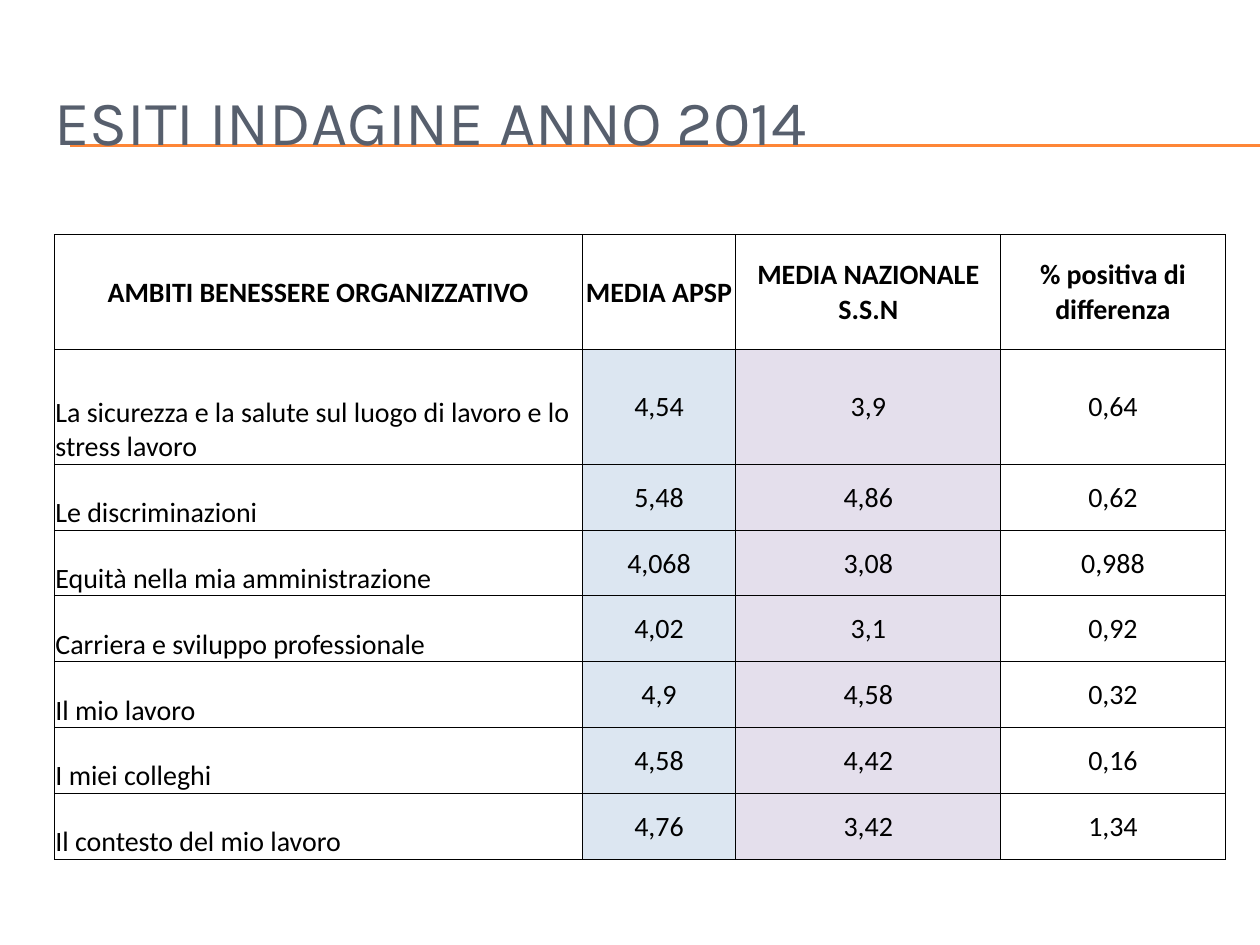
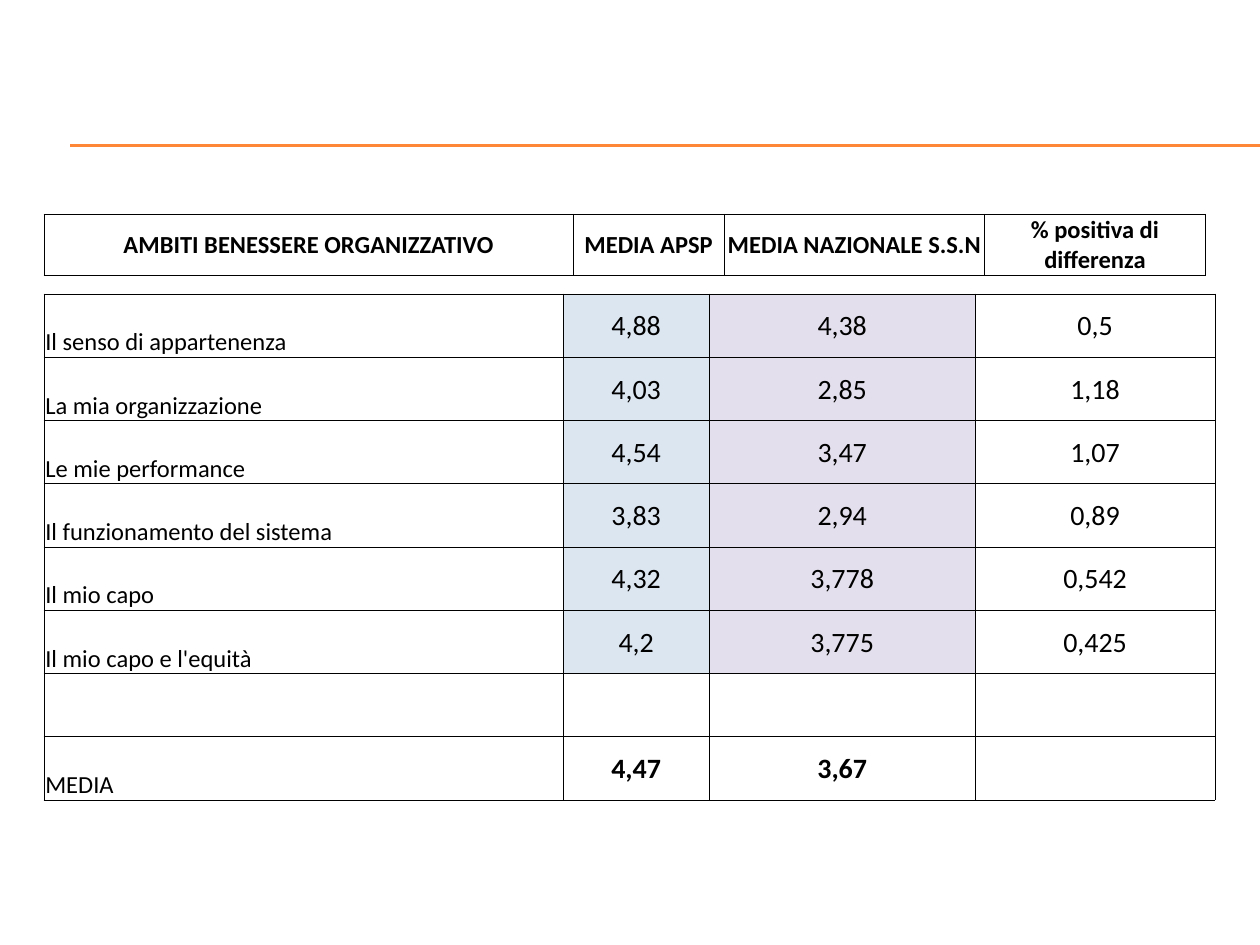
from lxml.etree import SubElement
from pptx import Presentation
from pptx.dml.color import RGBColor
from pptx.enum.shapes import MSO_CONNECTOR
from pptx.enum.text import MSO_ANCHOR, PP_ALIGN
from pptx.oxml.ns import qn
from pptx.util import Pt

COLORS = {
    "rule": "FE8637",
    "title": "575F6D",
    "text": "000000",
    "apsp": "DCE6F1",
    "national": "E4DFEC",
}
HEADERS = ("AMBITI BENESSERE ORGANIZZATIVO", "MEDIA APSP",
           "MEDIA NAZIONALE S.S.N", "% positiva di differenza")
FIRST_AREAS = [
    ("La sicurezza e la salute sul luogo di lavoro e lo stress lavoro",
     "4,54", "3,9", "0,64"),
    ("Le discriminazioni", "5,48", "4,86", "0,62"),
    ("Equità nella mia amministrazione", "4,068", "3,08", "0,988"),
    ("Carriera e sviluppo professionale", "4,02", "3,1", "0,92"),
    ("Il mio lavoro", "4,9", "4,58", "0,32"),
    ("I miei colleghi", "4,58", "4,42", "0,16"),
    ("Il contesto del mio lavoro", "4,76", "3,42", "1,34"),
]
SECOND_AREAS = [
    ("Il senso di appartenenza", "4,88", "4,38", "0,5"),
    ("La mia organizzazione", "4,03", "2,85", "1,18"),
    ("Le mie performance", "4,54", "3,47", "1,07"),
    ("Il funzionamento del sistema", "3,83", "2,94", "0,89"),
    ("Il mio capo", "4,32", "3,778", "0,542"),
    ("Il mio capo e l'equità", "4,2", "3,775", "0,425"),
    ("", "", "", ""),
    ("MEDIA", "4,47", "3,67", ""),
]


class SurveyDeck:
    title_font = "Karla"
    table_font = "Calibri"
    column_fills = (None, "apsp", "national", None)

    def __init__(self):
        self.deck = Presentation()
        self.deck.slide_width = Pt(720)
        self.deck.slide_height = Pt(540)
        self.page = None

    def add_page(self):
        self.page = self.deck.slides.add_slide(self.deck.slide_layouts[6])
        for height in (82.8, 83.5):
            self.add_rule(height)

    def add_rule(self, height):
        rule = self.page.shapes.add_connector(
            MSO_CONNECTOR.STRAIGHT, Pt(40.3), Pt(height), Pt(720), Pt(height))
        rule.line.color.rgb = RGBColor.from_string(COLORS["rule"])
        rule.line.width = Pt(0.75)
        SubElement(rule._element.spPr, qn("a:effectLst"))

    def add_title(self, text):
        box = self.page.shapes.add_textbox(Pt(23.8), Pt(36), Pt(684), Pt(66))
        frame = box.text_frame
        frame.word_wrap = True
        frame.vertical_anchor = MSO_ANCHOR.MIDDLE
        frame.text = text
        self.format_text(frame.paragraphs[0], self.title_font, 36, "title")

    def add_table(self, left, top, widths, heights, rows, label_size, value_size):
        table = self.page.shapes.add_table(
            len(rows), len(widths), Pt(left), Pt(top),
            Pt(sum(widths)), Pt(sum(heights))).table
        table.first_row = False
        table.horz_banding = False
        for column, width in zip(table.columns, widths):
            column.width = Pt(width)
        for row, height, values in zip(table.rows, heights, rows):
            row.height = Pt(height)
            is_header = values == HEADERS
            is_area = not is_header and values[-1] != ""
            for index, (cell, value) in enumerate(zip(row.cells, values)):
                is_label = index == 0 and not is_header
                self.format_cell(cell, self.column_fills[index] if is_area else None)
                cell.vertical_anchor = MSO_ANCHOR.BOTTOM if is_label else MSO_ANCHOR.MIDDLE
                cell.text_frame.text = value
                para = cell.text_frame.paragraphs[0]
                para.alignment = PP_ALIGN.LEFT if is_label else PP_ALIGN.CENTER
                self.format_text(para, self.table_font,
                                 label_size if is_label else value_size,
                                 "text", bold=not is_area and not is_label)

    def format_cell(self, cell, fill):
        cell.margin_left = cell.margin_right = cell.margin_top = Pt(0.7)
        cell.margin_bottom = 0
        properties = cell._tc.get_or_add_tcPr()
        for side in ("lnL", "lnR", "lnT", "lnB"):
            border = SubElement(properties, qn(f"a:{side}"), w=str(Pt(0.5)))
            solid = SubElement(border, qn("a:solidFill"))
            SubElement(solid, qn("a:srgbClr"), val=COLORS["text"])
        if fill:
            cell.fill.solid()
            cell.fill.fore_color.rgb = RGBColor.from_string(COLORS[fill])
        else:
            cell.fill.background()

    def format_text(self, para, font, size, color, bold=False):
        for span in para.runs:
            span.font.name = font
            span.font.size = Pt(size)
            span.font.bold = bold
            span.font.color.rgb = RGBColor.from_string(COLORS[color])


def main():
    survey = SurveyDeck()

    survey.add_page()
    survey.add_title("ESITI INDAGINE ANNO 2014")
    survey.add_table(31, 134, (301.7, 87.8, 151.4, 128.2),
                     [65.6] * 2 + [37.65] * 6, [HEADERS] + FIRST_AREAS, 16, 16)

    survey.add_page()
    survey.add_table(25.2, 122.4, (302.4, 86.2, 149, 126), [34.5],
                     [HEADERS], 14, 14)
    survey.add_table(25.2, 168, (296.6, 83.5, 152, 137), [36.15] * 8,
                     SECOND_AREAS, 14, 16)

    survey.deck.save("out.pptx")


if __name__ == "__main__":
    main()
